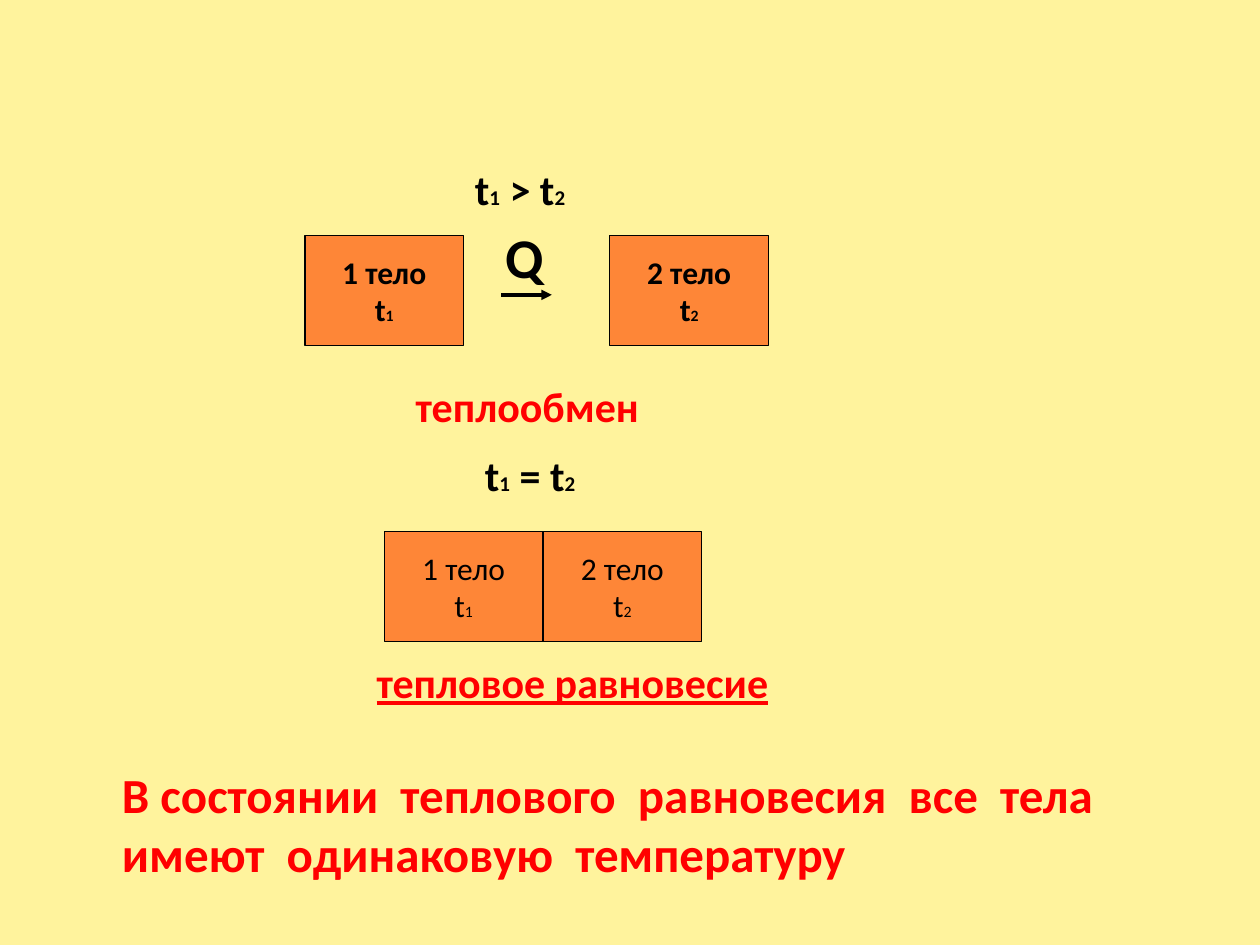
import pptx
import pptx.dml.color
import pptx.enum.shapes
import pptx.enum.text
import pptx.oxml
import pptx.oxml.ns
import pptx.util
from pptx.util import Inches

COLORS = {"page": "FFF39D", "body": "FE8637", "ink": "000000", "accent": "FF0000"}
FONT = "Calibri"
BODY_WIDTH, BODY_HEIGHT = 1.26, 0.87


def rgb(name):
    return pptx.dml.color.RGBColor.from_string(COLORS[name])


def write(frame, lines, size, color="ink", bold=True, underline=None, align=None):
    """Fill a frame; each line lists its spans, and every second span is a half-size index."""
    for number, spans in enumerate(lines):
        para = frame.add_paragraph() if number else frame.paragraphs[0]
        para.alignment = align
        for position, text in enumerate(spans):
            span = para.add_run()
            span.text = text
            span.font.name = FONT
            span.font.size = pptx.util.Pt(size / 2 if position % 2 else size)
            span.font.bold = bold
            span.font.underline = underline
            span.font.color.rgb = rgb(color)


def add_label(page, left, top, width, height, lines, size=24, wrap=False, **style):
    box = page.shapes.add_textbox(Inches(left), Inches(top), Inches(width), Inches(height))
    box.text_frame.word_wrap = wrap
    box.text_frame.auto_size = pptx.enum.text.MSO_AUTO_SIZE.SHAPE_TO_FIT_TEXT
    write(box.text_frame, lines, size, **style)


def add_body(page, left, top, number, bold):
    """Draw one numbered body with its temperature."""
    box = page.shapes.add_shape(
        pptx.enum.shapes.MSO_SHAPE.RECTANGLE,
        Inches(left), Inches(top), Inches(BODY_WIDTH), Inches(BODY_HEIGHT))
    box.shadow.inherit = False
    box.fill.solid()
    box.fill.fore_color.rgb = rgb("body")
    box.line.color.rgb = rgb("ink")
    box.line.width = pptx.util.Pt(0.75)
    box.text_frame.word_wrap = False
    box.text_frame.vertical_anchor = pptx.enum.text.MSO_ANCHOR.MIDDLE
    write(box.text_frame, [[f"{number} тело"], ["t", str(number)]], 18,
          bold=bold, align=pptx.enum.text.PP_ALIGN.CENTER)


def add_body_pair(page, left, top, gap, bold):
    for index in range(2):
        add_body(page, left + index * (BODY_WIDTH + gap), top, index + 1, bold)


def add_arrow(page, left, top, length):
    arrow = page.shapes.add_connector(
        pptx.enum.shapes.MSO_CONNECTOR.STRAIGHT,
        Inches(left), Inches(top), Inches(left + length), Inches(top))
    arrow.line.color.rgb = rgb("ink")
    arrow.line.width = pptx.util.Pt(2)
    line = arrow.line._get_or_add_ln()
    pptx.oxml.ns.qn("a:tailEnd")
    line.append(line.makeelement(pptx.oxml.ns.qn("a:tailEnd"), {"type": "triangle"}))
    properties = arrow._element.spPr
    properties.append(properties.makeelement(pptx.oxml.ns.qn("a:effectLst"), {}))


def add_heat_exchange(page, left, top):
    """Two separate bodies, with heat flowing from the first to the second."""
    add_label(page, left + 1.25, top, 0.99, 0.5, [["t", "1", " > t", "2"]])
    add_body_pair(page, left, top + 0.62, gap=1.16, bold=True)
    add_label(page, left + 1.49, top + 0.47, 0.51, 0.64, [["Q"]], size=32)
    add_arrow(page, left + 1.56, top + 1.09, 0.4)
    add_label(page, left + 0.78, top + 1.72, 1.99, 0.5, [["теплообмен"]], color="accent")


def add_equilibrium(page, left, top):
    """Two touching bodies at the same temperature."""
    add_label(page, left + 0.7, top, 0.99, 0.5, [["t", "1", " = t", "2"]])
    add_body_pair(page, left, top + 0.7, gap=0, bold=False)
    add_label(page, left - 0.16, top + 1.64, 3.34, 0.5, [["тепловое равновесие"]],
              color="accent", underline=True)


def add_conclusion(page, left, top, width, height):
    add_label(page, left, top, width, height,
              [["В состоянии  теплового  равновесия  все  тела"],
               ["имеют  одинаковую  температуру"]],
              size=28, wrap=True, color="accent")


def main():
    deck = pptx.Presentation()
    deck.slide_width, deck.slide_height = Inches(10), Inches(7.5)
    page = deck.slides.add_slide(deck.slide_layouts[6])
    page.background.fill.solid()
    page.background.fill.fore_color.rgb = rgb("page")
    add_heat_exchange(page, 2.42, 1.25)
    add_equilibrium(page, 3.05, 3.52)
    add_conclusion(page, 0.87, 6.02, 8.74, 1.04)
    deck.save("out.pptx")


if __name__ == "__main__":
    main()
